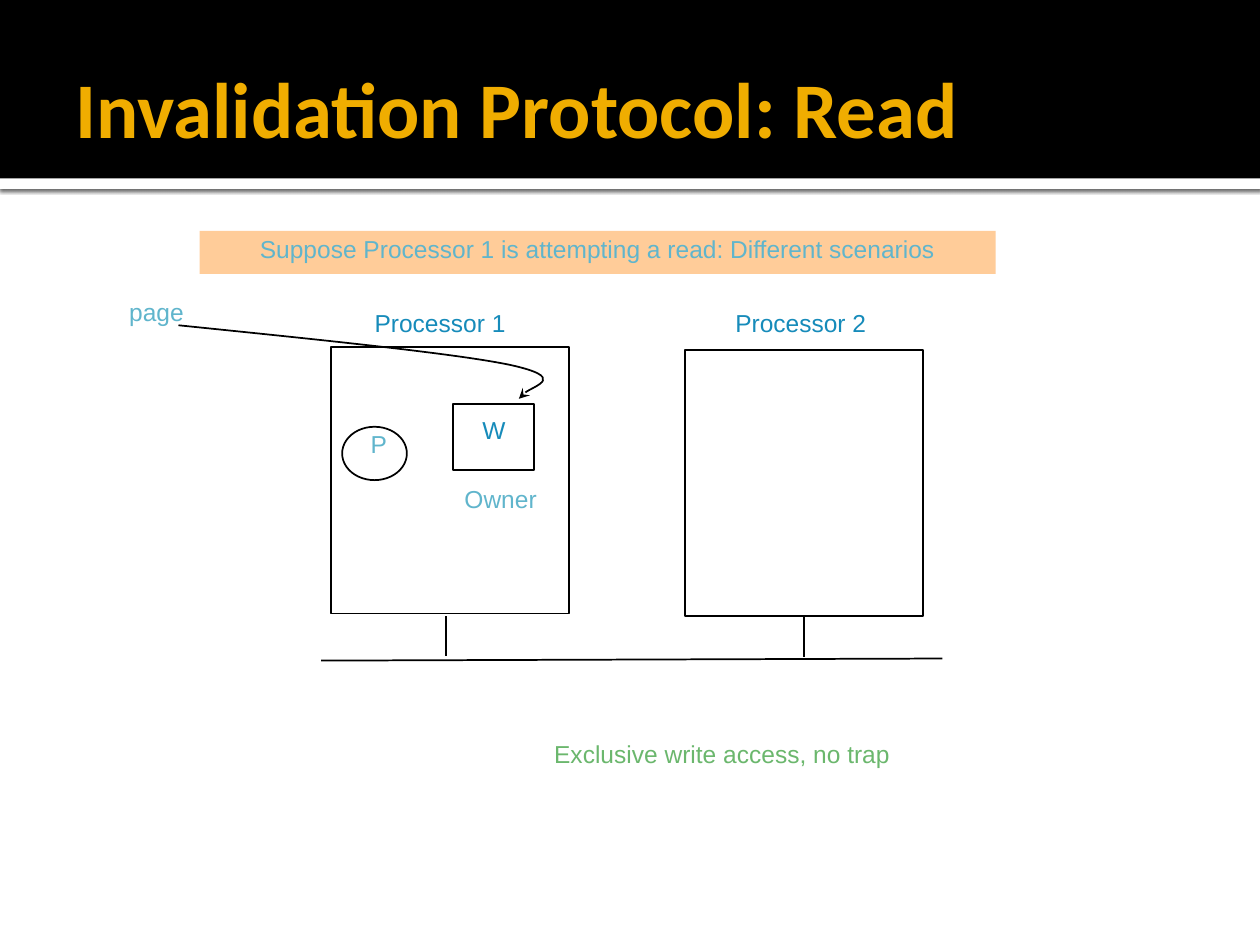
from lxml.etree import SubElement
from pptx import Presentation
from pptx.dml.color import RGBColor
from pptx.enum.shapes import MSO_CONNECTOR as Connector, MSO_SHAPE as Preset
from pptx.enum.text import MSO_ANCHOR as Anchor, PP_ALIGN as Align
from pptx.oxml.ns import qn
from pptx.util import Pt

COLORS = {
    "black": "000000", "white": "FFFFFF", "title": "F0AD00", "peach": "FFCC99",
    "blue": "168BBA", "sky": "60B5CC", "green": "6BB76D",
}


def rgb(name):
    """Return the named palette colour."""
    return RGBColor.from_string(COLORS[name])


def add_box(slide, box, fill=None, preset=Preset.RECTANGLE):
    """Add a filled shape without outline, or a black outline without fill."""
    shape = slide.shapes.add_shape(preset, *map(Pt, box))
    shape.shadow.inherit = False
    if fill:
        shape.fill.solid()
        shape.fill.fore_color.rgb = rgb(fill)
        shape.line.fill.background()
    else:
        outline(shape)
    return shape


def outline(shape):
    """Give a shape a thin black line and no fill."""
    shape.fill.background()
    shape.line.color.rgb = rgb("black")
    shape.line.width = Pt(1)


def write(shape, text, color, align=Align.CENTER):
    """Write one unwrapped body line at the top of a shape."""
    frame = shape.text_frame
    frame.word_wrap = False
    frame.vertical_anchor = Anchor.TOP
    frame.text = text
    para = frame.paragraphs[0]
    para.alignment = align
    para.line_spacing = 0.9
    style(para.runs[0], "Arial", 14, color)


def style(span, font, size, color):
    """Set font, size and colour of a run."""
    span.font.name = font
    span.font.size = Pt(size)
    span.font.color.rgb = rgb(color)


def add_label(slide, box, text, color, align=Align.CENTER):
    """Add a one-line text box."""
    write(slide.shapes.add_textbox(*map(Pt, box)), text, color, align)


def add_line(slide, start, end):
    """Add a straight black connector."""
    line = slide.shapes.add_connector(Connector.STRAIGHT, *map(Pt, start + end))
    line.line.color.rgb = rgb("black")
    line.line.width = Pt(1)
    SubElement(line._element.spPr, qn("a:effectLst"))
    return line


def add_header(slide, box, title):
    """Draw the black title band with its shadowed white strip."""
    left, top, width, height = box
    strip = add_box(slide, (left, top + height - 6, width, 12), "white")
    effects = strip._element.spPr.find(qn("a:effectLst"))
    shadow = SubElement(effects, qn("a:outerShdw"), blurRad=str(Pt(2.5)),
                        dist=str(Pt(0.8)), dir="5400000", rotWithShape="0")
    tint = SubElement(shadow, qn("a:srgbClr"), val=COLORS["black"])
    SubElement(tint, qn("a:alpha"), val="60000")
    add_box(slide, box, "black")
    heading = slide.shapes.add_textbox(Pt(left + 36), Pt(top + 12), Pt(width - 72), Pt(98.6))
    frame = heading.text_frame
    frame.word_wrap = True
    frame.vertical_anchor = Anchor.MIDDLE
    frame.margin_right = Pt(3.6)
    frame.text = title
    span = frame.paragraphs[0].runs[0]
    style(span, "Calibri", 45, "title")
    span.font.bold = True


def add_processor(slide, box, name, shift):
    """Draw a processor outline with its name above, shifted sideways."""
    left, top, width, _ = box
    add_label(slide, (left + shift, 174.2, width + 7, 31.7), name, "blue")
    return add_box(slide, box)


def add_process_and_page(slide, box):
    """Draw the process circle and the owned page inside a processor."""
    left, top = box[:2]
    add_box(slide, (left + 70, top + 32.5, 46, 38))
    add_label(slide, (left + 72, top + 37.4, 42.5, 31.7), "W", "blue")
    add_label(slide, (left + 52.8, top + 77, 88.6, 31.7), "Owner", "sky")
    add_box(slide, (left + 6.5, top + 45.7, 37, 30.5), preset=Preset.OVAL)
    add_label(slide, (left + 9.5, top + 45.3, 36, 31.7), "P", "sky")


def add_page_pointer(slide, box):
    """Draw the page label and its curved arrow within the box."""
    left, top, width, height = box
    add_label(slide, (left - 48.5, top - 18, 72, 31.7), "page", "sky")
    knots = [(0, 0), (0.35, 0.19), (0.71, 0.38), (0.855, 0.54),
             (1, 0.71), (0.873, 0.92), (0.877, 1)]
    points = [(Pt(left + x * width), Pt(top + y * height)) for x, y in knots]
    builder = slide.shapes.build_freeform(*points[0])
    builder.add_line_segments(points[1:], close=False)
    curve = builder.convert_to_shape()
    curve.shadow.inherit = False
    outline(curve)
    outline_path = next(curve._element.iter(qn("a:path")))
    segments = outline_path.findall(qn("a:lnTo"))
    for first in range(0, len(segments), 3):
        bend = SubElement(outline_path, qn("a:cubicBezTo"))
        for segment in segments[first:first + 3]:
            bend.append(segment[0])
            outline_path.remove(segment)
    SubElement(curve.line._get_or_add_ln(), qn("a:tailEnd"), type="stealth")


def add_network(slide, box):
    """Draw two processors on a shared bus."""
    left, top, width, height = box
    first = (left + 5.5, top, 136, 152.5)
    second = (left + 208, top + 2, 136, 152)
    add_processor(slide, first, "Processor 1", -9)
    right = add_processor(slide, second, "Processor 2", -5.4)
    add_line(slide, (left + 71.3, top + 154), (left + 71.3, top + 176.5))
    stem = add_line(slide, (left + 276, top + 154), (left + 276, top + 177))
    stem.begin_connect(right, 2)
    add_line(slide, (left, top + height), (left + width, top + height - 1.2))
    add_process_and_page(slide, first)
    add_page_pointer(slide, (left - 81.5, top - 12.3, 221.8, 42))


def main():
    """Build and save the slide."""
    deck = Presentation()
    deck.slide_width, deck.slide_height = Pt(720), Pt(540)
    page = deck.slides.add_slide(deck.slide_layouts[6])
    add_header(page, (0, 0, 720, 102), "Invalidation Protocol: Read")
    add_network(page, (183.5, 198.2, 355, 179.3))
    add_label(page, (309.6, 420.5, 208, 23), "Exclusive write access, no trap", "green", Align.LEFT)
    banner = add_box(page, (114, 132, 455, 24.5), "peach")
    write(banner, "Suppose Processor 1 is attempting a read: Different scenarios", "sky")
    deck.save("out.pptx")


if __name__ == "__main__":
    main()
